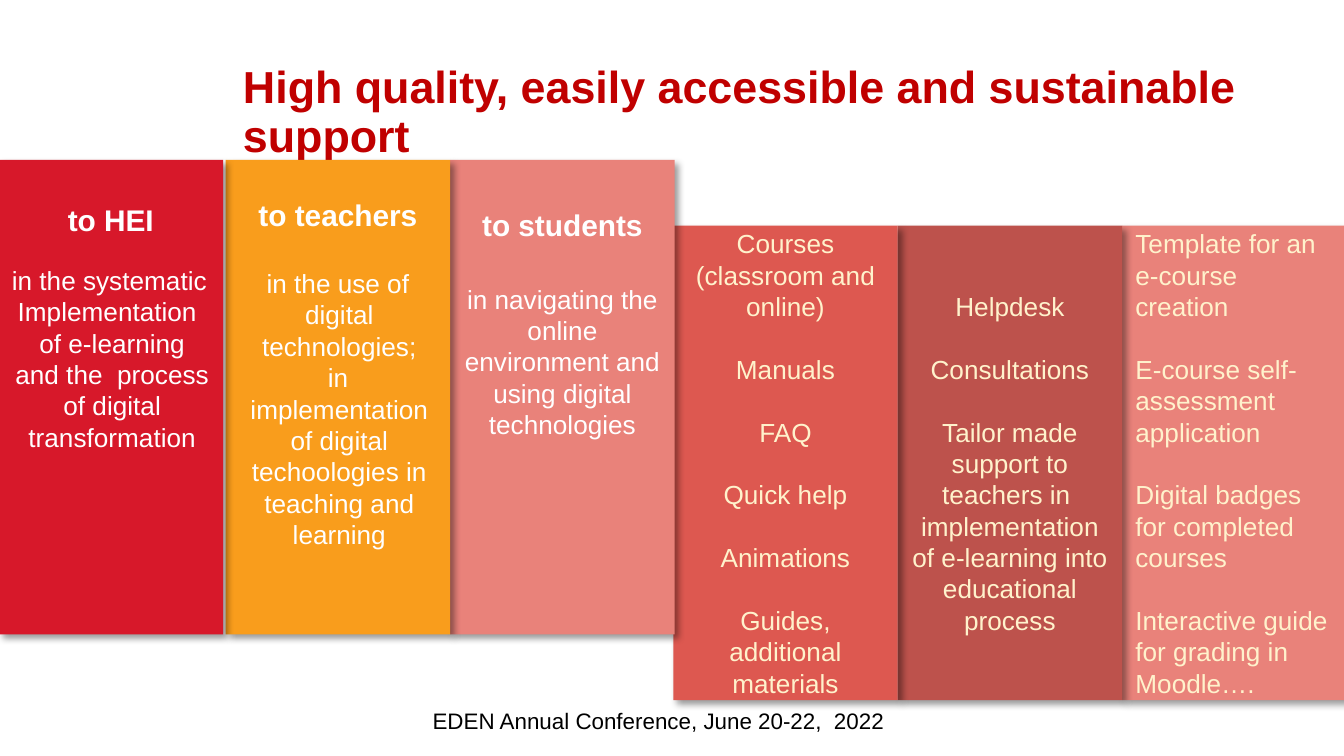
from lxml import etree
from pptx import Presentation
from pptx import util as u
from pptx.dml.color import RGBColor
from pptx.enum import shapes, text
from pptx.oxml.ns import qn

FONT = "Arial"
WHITE, CREAM, DARK_RED, BLACK = "FFFFFF", "FFF2CC", "C00000", "000000"
SLIDE_W = 10
SLIDE_H = SLIDE_W * 9 / 16
COL_W, COL_H = 1.67, 3.53
AUDIENCE_TOP, SUPPORT_TOP, SUPPORT_LEFT = 1.19, 1.68, 5.01
LINE_GAP = 16.8
HANGING = 0.02
CENTER, LEFT = text.PP_ALIGN.CENTER, text.PP_ALIGN.LEFT
MIDDLE, TOP = text.MSO_ANCHOR.MIDDLE, text.MSO_ANCHOR.TOP

TITLE = "High quality, easily accessible and sustainable\vsupport"
FOOTER = "EDEN Annual Conference, June 20-22,  2022"

# Left (in), heading, fill, inset above the heading (in), gap below it (pt),
# body as (text, alignment, hanging indent in inches)
AUDIENCES = [
    (-0.01, "to HEI", "D7182A", 0.31, 14.4, [
        ("in the systematic", LEFT, 0),
        ("Implementation  of e-learning and the  process of digital transformation",
         CENTER, HANGING)]),
    (1.68, "to teachers", "F99D1C", 0.27, 19, [
        ("in the use of digital technologies;", CENTER, HANGING),
        ("in implementation of digital techoologies in teaching and learning",
         CENTER, HANGING)]),
    (3.35, "to students", "E9827A", 0.35, 21.5, [
        ("in navigating the online environment and using digital technologies", CENTER, 0)]),
]
# Fill, alignment, items
SUPPORT = [
    ("DD5850", CENTER, ["Courses (classroom and online)", "Manuals", "FAQ", "Quick help",
                        "Animations", "Guides, additional materials"]),
    ("BD524C", CENTER, ["Helpdesk", "Consultations",
                        "Tailor made support to teachers in  implementation "
                        "of e-learning into educational process"]),
    ("E9827A", LEFT, ["Template for an e-course creation", "E-course self-assessment application",
                      "Digital badges for completed courses",
                      "Interactive guide for grading in Moodle…."]),
]


def rgb(value):
    return RGBColor.from_string(value)


def write(sp, paragraphs, color, anchor=MIDDLE, inset_top=0.05):
    """Fill a shape with paragraphs given as (text, format values)."""
    tf = sp.text_frame
    tf.word_wrap = True
    tf.vertical_anchor = anchor
    tf.margin_top = u.Inches(inset_top)
    for i, (content, fmt) in enumerate(paragraphs):
        p = tf.paragraphs[0] if i == 0 else tf.add_paragraph()
        p.text = content
        p.alignment = fmt.get("align", CENTER)
        p.space_before = u.Pt(fmt.get("before", 0) if i else 0)
        p.line_spacing = fmt.get("spacing", 1.0)
        hanging = u.Inches(fmt.get("hanging", 0))
        if hanging:
            pPr = p._p.get_or_add_pPr()
            pPr.set("marL", str(hanging))
            pPr.set("indent", str(-hanging))
        values = {"name": FONT, "size": u.Pt(fmt.get("size", 14)), "bold": fmt.get("bold", False)}
        for r in p.runs:
            for key, value in values.items():
                setattr(r.font, key, value)
            r.font.color.rgb = rgb(color)


def add_text(s, left, top, width, height, content, color, **fmt):
    sp = s.shapes.add_textbox(*map(u.Inches, (left, top, width, height)))
    write(sp, [(content, fmt)], color)


def add_panel(s, left, top, fill):
    sp = s.shapes.add_shape(shapes.MSO_SHAPE.RECTANGLE, *map(
        u.Inches, (left, top, COL_W, COL_H)))
    sp.fill.solid()
    sp.fill.fore_color.rgb = rgb(fill)
    sp.line.fill.background()
    sp.shadow.inherit = False
    effects = sp.element.spPr.find(qn("a:effectLst"))
    shadow = etree.SubElement(effects, qn("a:outerShdw"), blurRad=str(u.Pt(4)),
                              dist=str(u.Pt(3)), dir="2700000", algn="tl", rotWithShape="0")
    color = etree.SubElement(shadow, qn("a:srgbClr"), val=BLACK)
    etree.SubElement(color, qn("a:alpha"), val="40000")
    return sp


def main():
    prs = Presentation()
    prs.slide_width, prs.slide_height = u.Inches(SLIDE_W), u.Inches(SLIDE_H)
    s = prs.slides.add_slide(prs.slide_layouts[6])
    add_text(s, 1.71, 0.3, 7.6, 1.09, TITLE, DARK_RED,
             size=24, bold=True, align=LEFT, spacing=0.9)
    add_text(s, 1.74, 5.21, 6.32, 0.3, FOOTER, BLACK, size=12)

    # Right to left, so that each panel casts its shadow on the next one
    for i, (fill, align, items) in reversed(list(enumerate(SUPPORT))):
        sp = add_panel(s, SUPPORT_LEFT + i * COL_W, SUPPORT_TOP, fill)
        write(sp, [(item, {"align": align, "before": LINE_GAP}) for item in items], CREAM)
    for left, heading, fill, inset, gap, body in reversed(AUDIENCES):
        sp = add_panel(s, left, AUDIENCE_TOP, fill)
        paragraphs = [(heading, {"size": 16, "bold": True})]
        paragraphs += [(line, {"align": align, "hanging": hanging, "before": 0 if n else gap})
                       for n, (line, align, hanging) in enumerate(body)]
        write(sp, paragraphs, WHITE, TOP, inset)
    prs.save("out.pptx")


if __name__ == "__main__":
    main()
